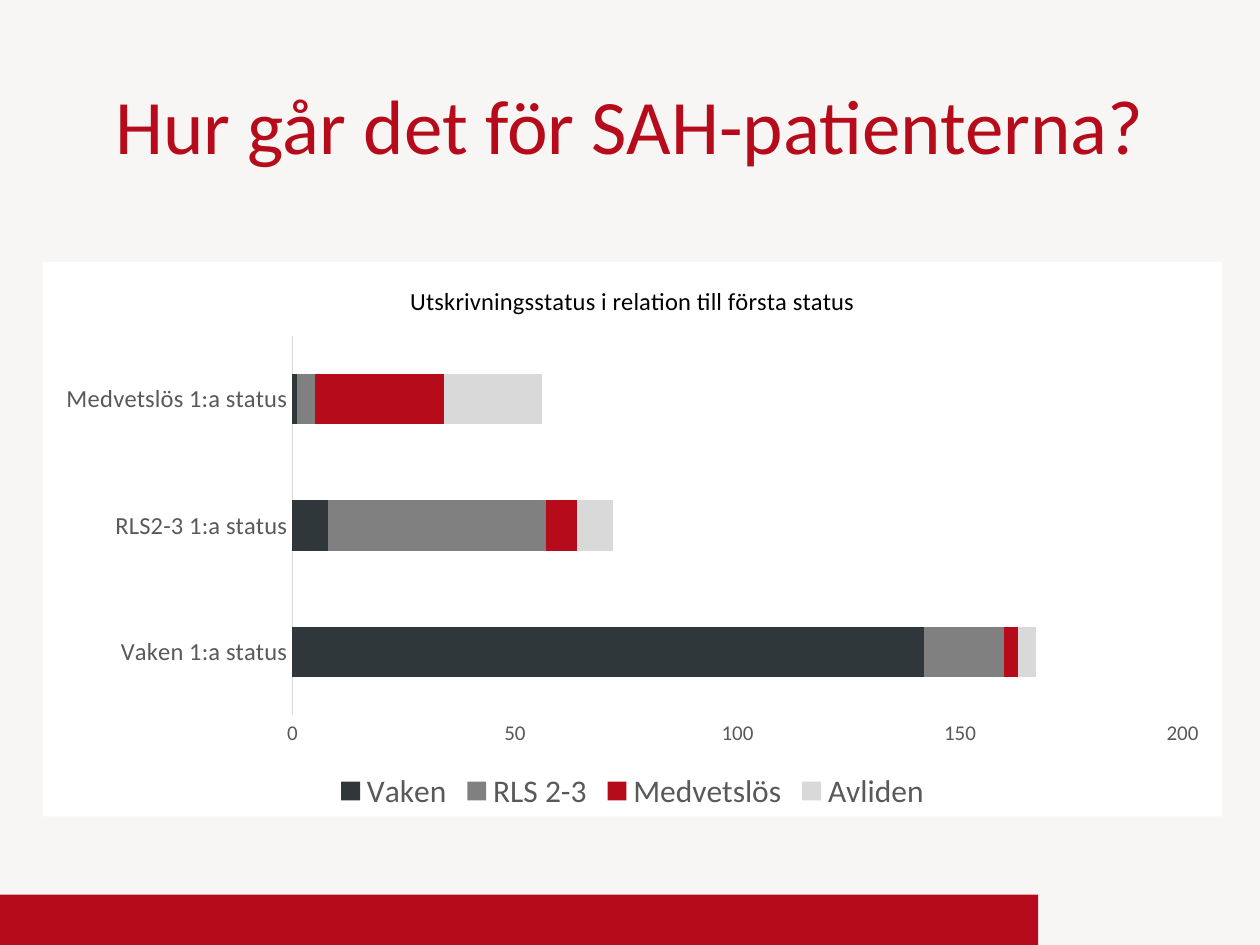
"""Build a slide with a stacked bar chart of discharge status for SAH patients."""
import pptx
import pptx.chart.data
import pptx.dml.color
import pptx.enum.chart
import pptx.enum.shapes
import pptx.enum.text
import pptx.oxml
import pptx.oxml.ns
import pptx.util

Inches = pptx.util.Inches
Pt = pptx.util.Pt
RGBColor = pptx.dml.color.RGBColor

FONT = "Calibri"
BACKGROUND = RGBColor(0xF7, 0xF6, 0xF5)
RED = RGBColor(0xB5, 0x0B, 0x1B)
BLACK = RGBColor(0x00, 0x00, 0x00)
WHITE = RGBColor(0xFF, 0xFF, 0xFF)
TEXT_GREY = RGBColor(0x59, 0x59, 0x59)
SLATE = RGBColor(0x2F, 0x37, 0x3A)
MID_GREY = RGBColor(0x80, 0x80, 0x80)
LIGHT_GREY = RGBColor(0xD9, 0xD9, 0xD9)

CATEGORIES = ["Vaken 1:a status", "RLS2-3 1:a status", "Medvetslös 1:a status"]
SERIES = [
    ("Vaken", (142, 8, 1), SLATE),
    ("RLS 2-3", (18, 49, 4), MID_GREY),
    ("Medvetslös", (3, 7, 29), RED),
    ("Avliden", (4, 8, 22), LIGHT_GREY),
]


def style_font(font, size, color):
    """Set the typeface, size, weight and colour of a font."""
    font.name = FONT
    font.size = Pt(size)
    font.bold = False
    font.color.rgb = color


def add_footer_bar(s):
    """Add the red bar along the bottom edge."""
    bar = s.shapes.add_shape(
        pptx.enum.shapes.MSO_SHAPE.RECTANGLE,
        Inches(0), Inches(7.1), Inches(8.24), Inches(0.4))
    bar.shadow.inherit = False
    bar.fill.solid()
    bar.fill.fore_color.rgb = RED
    bar.line.fill.background()


def set_title(s, text):
    """Place and format the slide title."""
    sp = s.shapes.title
    sp.left, sp.top = Inches(0.75), Inches(0.18)
    sp.width, sp.height = Inches(8.5), Inches(1.61)
    tf = sp.text_frame
    tf.text = text
    tf.vertical_anchor = pptx.enum.text.MSO_ANCHOR.MIDDLE
    p = tf.paragraphs[0]
    p.alignment = pptx.enum.text.PP_ALIGN.CENTER
    style_font(p.runs[0].font, 44, RED)


def fill_chart_area(chart, color):
    """Give the chart area a solid fill without an outline."""
    sp_pr = pptx.oxml.parse_xml(
        f'<c:spPr {pptx.oxml.ns.nsdecls("c", "a")}><a:solidFill>'
        f'<a:srgbClr val="{color}"/></a:solidFill>'
        '<a:ln><a:noFill/></a:ln></c:spPr>')
    chart.element.find(pptx.oxml.ns.qn("c:chart")).addnext(sp_pr)


def style_axis(axis, size):
    """Remove gridlines and tick marks and format the labels."""
    axis.has_major_gridlines = False
    axis.major_tick_mark = pptx.enum.chart.XL_TICK_MARK.NONE
    axis.minor_tick_mark = pptx.enum.chart.XL_TICK_MARK.NONE
    style_font(axis.tick_labels.font, size, TEXT_GREY)


def add_status_chart(s, title):
    """Add the stacked bar chart of status at discharge."""
    data = pptx.chart.data.CategoryChartData()
    data.categories = CATEGORIES
    for name, values, _ in SERIES:
        data.add_series(name, values)
    chart = s.shapes.add_chart(
        pptx.enum.chart.XL_CHART_TYPE.BAR_STACKED,
        Inches(0.34), Inches(2.08), Inches(9.36), Inches(4.4), data).chart
    style_font(chart.font, 10, BLACK)
    fill_chart_area(chart, WHITE)

    tf = chart.chart_title.text_frame
    tf.text = title
    style_font(tf.paragraphs[0].runs[0].font, 14, BLACK)

    style_axis(chart.category_axis, 14)
    line = chart.category_axis.format.line
    line.color.rgb = LIGHT_GREY
    line.width = Pt(0.75)
    style_axis(chart.value_axis, 12)
    chart.value_axis.format.line.fill.background()
    chart.value_axis.minimum_scale = 0
    chart.value_axis.maximum_scale = 200
    chart.value_axis.major_unit = 50

    chart.has_legend = True
    chart.legend.position = pptx.enum.chart.XL_LEGEND_POSITION.BOTTOM
    chart.legend.include_in_layout = False
    style_font(chart.legend.font, 18, TEXT_GREY)

    plot = chart.plots[0]
    plot.gap_width = 150
    plot.overlap = 100
    plot.vary_by_categories = False
    for series, (_, _, color) in zip(plot.series, SERIES):
        series.format.fill.solid()
        series.format.fill.fore_color.rgb = color


def main():
    """Build and save the presentation."""
    prs = pptx.Presentation()
    prs.slide_width, prs.slide_height = Inches(10), Inches(7.5)
    s = prs.slides.add_slide(prs.slide_layouts.get_by_name("Title Only"))
    s.background.fill.solid()
    s.background.fill.fore_color.rgb = BACKGROUND
    add_footer_bar(s)
    set_title(s, "Hur går det för SAH-patienterna?")
    add_status_chart(s, "Utskrivningsstatus i relation till första status")
    prs.save("out.pptx")


if __name__ == "__main__":
    main()
